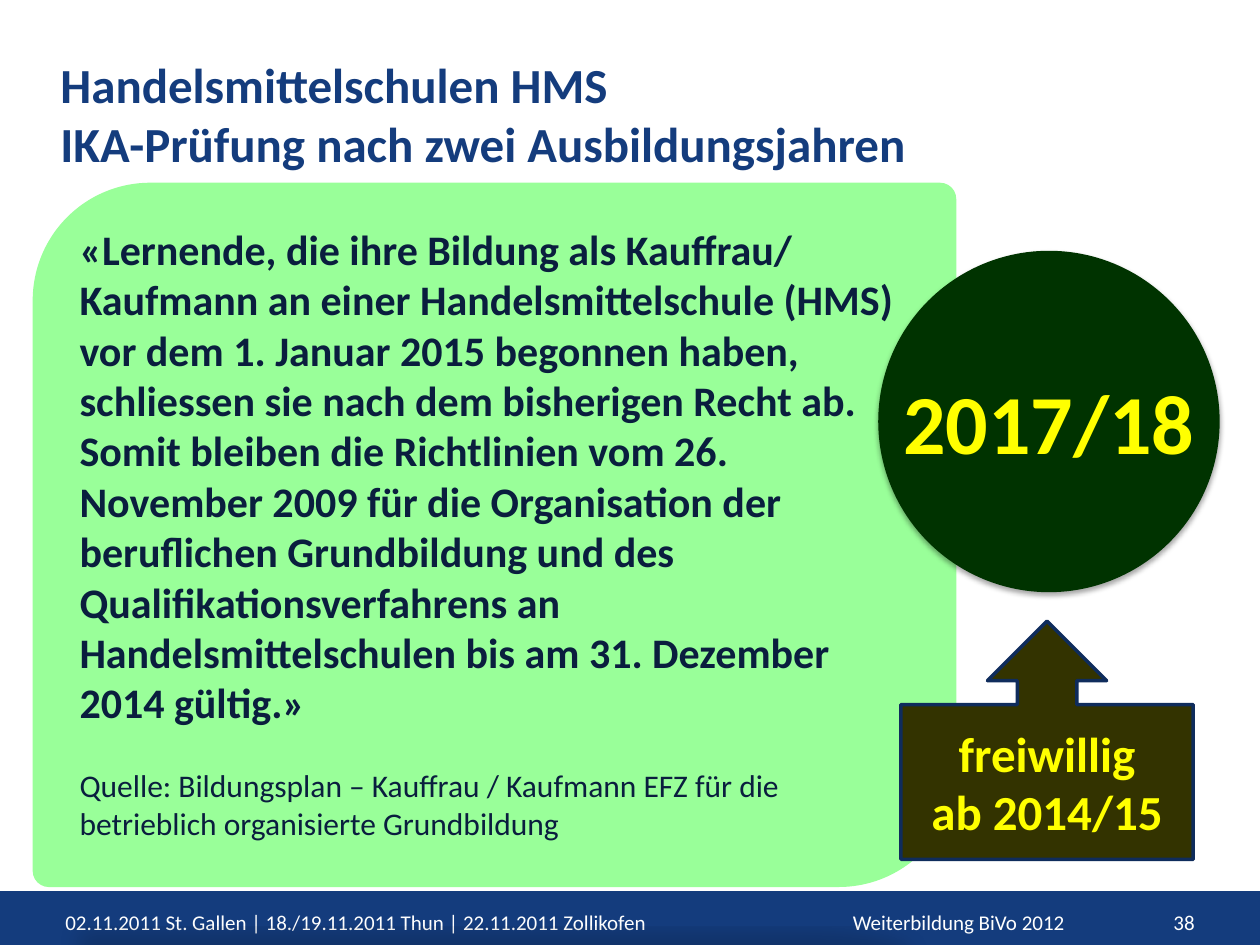
from dataclasses import dataclass

from lxml import etree
from pptx import Presentation
from pptx.dml.color import RGBColor
from pptx.enum.shapes import MSO_SHAPE
from pptx.enum.text import MSO_ANCHOR, PP_ALIGN
from pptx.oxml.ns import qn
from pptx.util import Inches, Pt

RECT, OVAL = MSO_SHAPE.RECTANGLE, MSO_SHAPE.OVAL
LEAF, CALLOUT = MSO_SHAPE.ROUND_2_DIAG_RECTANGLE, MSO_SHAPE.UP_ARROW_CALLOUT
LEFT, MID, RIGHT = PP_ALIGN.LEFT, PP_ALIGN.CENTER, PP_ALIGN.RIGHT
TOP, CENTER = MSO_ANCHOR.TOP, MSO_ANCHOR.MIDDLE


@dataclass(frozen=True)
class Theme:
    """Hold the colours, font and type sizes."""
    font: str = "Calibri"
    blue: str = "143C7D"
    edge: str = "0F2C5C"
    ink: str = "0A1E3E"
    white: str = "FFFFFF"
    yellow: str = "FFFF00"
    mint: str = "99FF99"
    green: str = "003300"
    olive: str = "333300"
    foot: int = 12
    note: int = 18
    quote: int = 24
    head: int = 28
    year: int = 48


THEME = Theme()


def span(box):
    """Turn a box of inch numbers into lengths."""
    return [Inches(v) for v in box]


def style(par, size, color, bold=False, align=LEFT):
    """Format one paragraph."""
    par.alignment = align
    form = {"name": THEME.font, "size": Pt(size), "bold": bold}
    for run in par.runs:
        for key, value in form.items():
            setattr(run.font, key, value)
        run.font.color.rgb = RGBColor.from_string(color)


def write(frame, text, size, color, bold=False, align=LEFT, anchor=TOP):
    """Fill a text frame with one styled paragraph."""
    form = {"word_wrap": True, "vertical_anchor": anchor, "text": text}
    for key, value in form.items():
        setattr(frame, key, value)
    style(frame.paragraphs[0], size, color, bold, align)


def draw(shapes, kind, box, fill, line=None, width=0.75):
    """Add a filled preset shape without a shadow."""
    shape = shapes.add_shape(kind, *span(box))
    shape.shadow.inherit = False
    shape.fill.solid()
    shape.fill.fore_color.rgb = RGBColor.from_string(fill)
    if line:
        shape.line.color.rgb = RGBColor.from_string(line)
        shape.line.width = Pt(width)
    else:
        shape.line.fill.background()
    return shape


def shade(shape, alpha, blur, dist, **scale):
    """Cast a soft black shadow straight down."""
    effects = shape._element.spPr.find(qn("a:effectLst"))
    form = {"blurRad": Pt(blur), "dist": Pt(dist), "dir": 5400000,
            **scale, "rotWithShape": 0}
    outer = etree.SubElement(effects, qn("a:outerShdw"))
    for key, value in form.items():
        outer.set(key, str(int(value)))
    color = etree.SubElement(outer, qn("a:srgbClr"), val="000000")
    etree.SubElement(color, qn("a:alpha"), val=str(alpha * 1000))


def footer(slide, box):
    """Draw the footer bar with its three texts."""
    draw(slide.shapes, RECT, box, THEME.blue, THEME.blue)
    top = box[1] + 0.09
    parts = [
        (0.42, 6.08, LEFT,
         "02.11.2011 St. Gallen | 18./19.11.2011 Thun | 22.11.2011 Zollikofen"),
        (6.67, 2.33, LEFT, "Weiterbildung BiVo 2012"),
        (9, 0.58, RIGHT, "38"),
    ]
    for left, width, align, text in parts:
        label = slide.shapes.add_textbox(*span((left, top, width, 0.33)))
        write(label.text_frame, text, THEME.foot, THEME.white, align=align)


def heading(slide, box):
    """Place the title."""
    title = slide.shapes.title
    for key, value in zip(("left", "top", "width", "height"), span(box)):
        setattr(title, key, value)
    write(title.text_frame,
          "Handelsmittelschulen HMS\vIKA-Prüfung nach zwei Ausbildungsjahren",
          THEME.head, THEME.blue, True)


def quote(slide, box):
    """Draw the green panel with the quotation and its source."""
    panel = draw(slide.shapes, LEAF, box, THEME.mint)
    panel.adjustments[0], panel.adjustments[1] = 0.167, 0.023
    shade(panel, 15, 12, 25, sx=90000, sy=-19000)
    frame = panel.text_frame
    write(frame,
          "«Lernende, die ihre Bildung als Kauffrau/ Kaufmann an einer "
          "Handelsmittelschule (HMS) vor dem 1. Januar 2015 begonnen haben, "
          "schliessen sie nach dem bisherigen Recht ab. Somit bleiben die "
          "Richtlinien vom 26. November 2009 für die Organisation der "
          "beruflichen Grundbildung und des Qualifikationsverfahrens an "
          "Handelsmittelschulen bis am 31. Dezember 2014 gültig.»",
          THEME.quote, THEME.ink, True)
    note = frame.add_paragraph()
    note.text = ("Quelle: Bildungsplan – Kauffrau / Kaufmann EFZ für die "
                 "betrieblich organisierte Grundbildung")
    note.space_before = Pt(22)
    style(note, THEME.note, THEME.ink)


def badge(slide, box):
    """Draw the round badge with the school year."""
    left, top, size, _ = box
    group = slide.shapes.add_group_shape()
    disc = draw(group.shapes, OVAL, box, THEME.green)
    shade(disc, 35, 3.1, 1.8)
    label = group.shapes.add_textbox(
        *span((left - 0.02, top + 0.9, size + 0.04, 0.91)))
    write(label.text_frame, "2017/18", THEME.year, THEME.yellow, True, MID)


def callout(slide, box):
    """Draw the arrow callout below the badge."""
    arrow = draw(slide.shapes, CALLOUT, box, THEME.olive, THEME.edge, 2)
    write(arrow.text_frame, "freiwillig\vab 2014/15", THEME.head,
          THEME.yellow, True, MID, CENTER)


def main():
    """Build and save the slide."""
    deck = Presentation()
    deck.slide_width, deck.slide_height = Inches(10), Inches(7.5)
    slide = deck.slides.add_slide(deck.slide_layouts[5])
    footer(slide, (-0.04, 7.08, 10.04, 0.42))
    heading(slide, (0.38, 0.38, 7.3, 0.93))
    quote(slide, (0.26, 1.45, 7.33, 5.59))
    badge(slide, (6.97, 1.99, 2.71, 2.71))
    callout(slide, (7.15, 4.93, 2.32, 1.89))
    deck.save("out.pptx")


if __name__ == "__main__":
    main()
